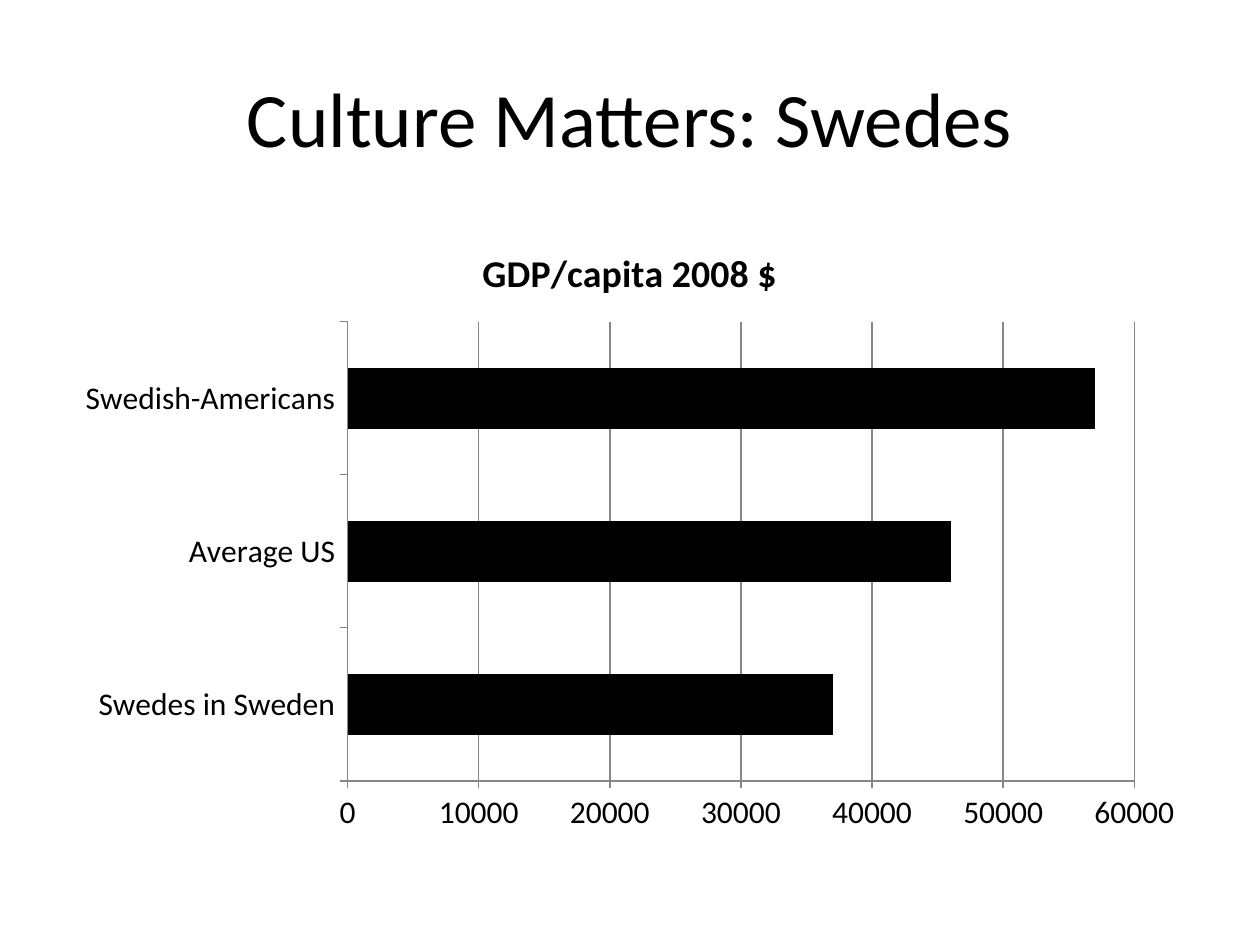
import pptx
import pptx.chart.data
import pptx.dml.color
import pptx.enum.chart
import pptx.enum.text
import pptx.util

EMU_PER_PX = 914400 / 126
COLORS = {"ink": "000000", "axis": "868686", "background": "FFFFFF"}
FONT_NAME = "Calibri"
CHART_TITLE = "GDP/capita 2008 $"
GDP_PER_CAPITA = {
    "Swedes in Sweden": 37000,
    "Average US": 46000,
    "Swedish-Americans": 57000,
}


def px(length):
    """Convert pixels to EMU."""
    return pptx.util.Emu(round(length * EMU_PER_PX))


def rgb(name):
    """Look up a named colour."""
    return pptx.dml.color.RGBColor.from_string(COLORS[name])


def set_attributes(target, values):
    """Set each attribute of the target from a dict."""
    for name, value in values.items():
        setattr(target, name, value)


def format_font(font, size, bold=False):
    """Apply the slide's typeface and ink colour."""
    set_attributes(font, {"name": FONT_NAME, "size": pptx.util.Pt(size), "bold": bold})
    font.color.rgb = rgb("ink")


def format_line(line):
    """Apply the thin grey line of axes and gridlines."""
    line.color.rgb = rgb("axis")
    line.width = pptx.util.Pt(0.75)


def place_title(slide, box, text):
    """Fill the title placeholder and move it to the box."""
    title = slide.shapes.title
    set_attributes(title, dict(zip(("left", "top", "width", "height"), map(px, box))))
    title.text_frame.vertical_anchor = pptx.enum.text.MSO_ANCHOR.MIDDLE
    paragraph = title.text_frame.paragraphs[0]
    paragraph.alignment = pptx.enum.text.PP_ALIGN.CENTER
    run = paragraph.add_run()
    run.text = text
    format_font(run.font, 44)


def place_chart(slide, box):
    """Draw the bar chart of GDP per capita in the box."""
    data = pptx.chart.data.CategoryChartData(number_format="General")
    data.categories = list(GDP_PER_CAPITA)
    data.add_series(CHART_TITLE, list(GDP_PER_CAPITA.values()))
    chart = slide.shapes.add_chart(
        pptx.enum.chart.XL_CHART_TYPE.BAR_CLUSTERED, *map(px, box), data
    ).chart
    chart.has_legend = False
    format_font(chart.font, 18)

    title_frame = chart.chart_title.text_frame
    title_frame.text = CHART_TITLE
    format_font(title_frame.paragraphs[0].runs[0].font, 21.6, bold=True)
    chart.chart_title.include_in_layout = False

    axis_values = {
        "major_tick_mark": pptx.enum.chart.XL_TICK_MARK.OUTSIDE,
        "minor_tick_mark": pptx.enum.chart.XL_TICK_MARK.NONE,
    }
    for axis in (chart.category_axis, chart.value_axis):
        set_attributes(axis, axis_values)
        format_line(axis.format.line)
    set_attributes(
        chart.value_axis,
        {
            "minimum_scale": 0,
            "maximum_scale": 60000,
            "major_unit": 10000,
            "has_major_gridlines": True,
        },
    )
    format_line(chart.value_axis.major_gridlines.format.line)

    plot = chart.plots[0]
    set_attributes(plot, {"gap_width": 150, "vary_by_categories": False})
    fill = plot.series[0].format.fill
    fill.solid()
    fill.fore_color.rgb = rgb("ink")


def main():
    """Build and save the presentation."""
    presentation = pptx.Presentation()
    set_attributes(presentation, {"slide_width": px(1260), "slide_height": px(945)})
    slide = presentation.slides.add_slide(
        presentation.slide_layouts.get_by_name("Title Only")
    )
    slide.background.fill.solid()
    slide.background.fill.fore_color.rgb = rgb("background")
    place_title(slide, (63, 38, 1134, 158), "Culture Matters: Swedes")
    place_chart(slide, (63, 220, 1134, 624))
    presentation.save("out.pptx")


if __name__ == "__main__":
    main()
